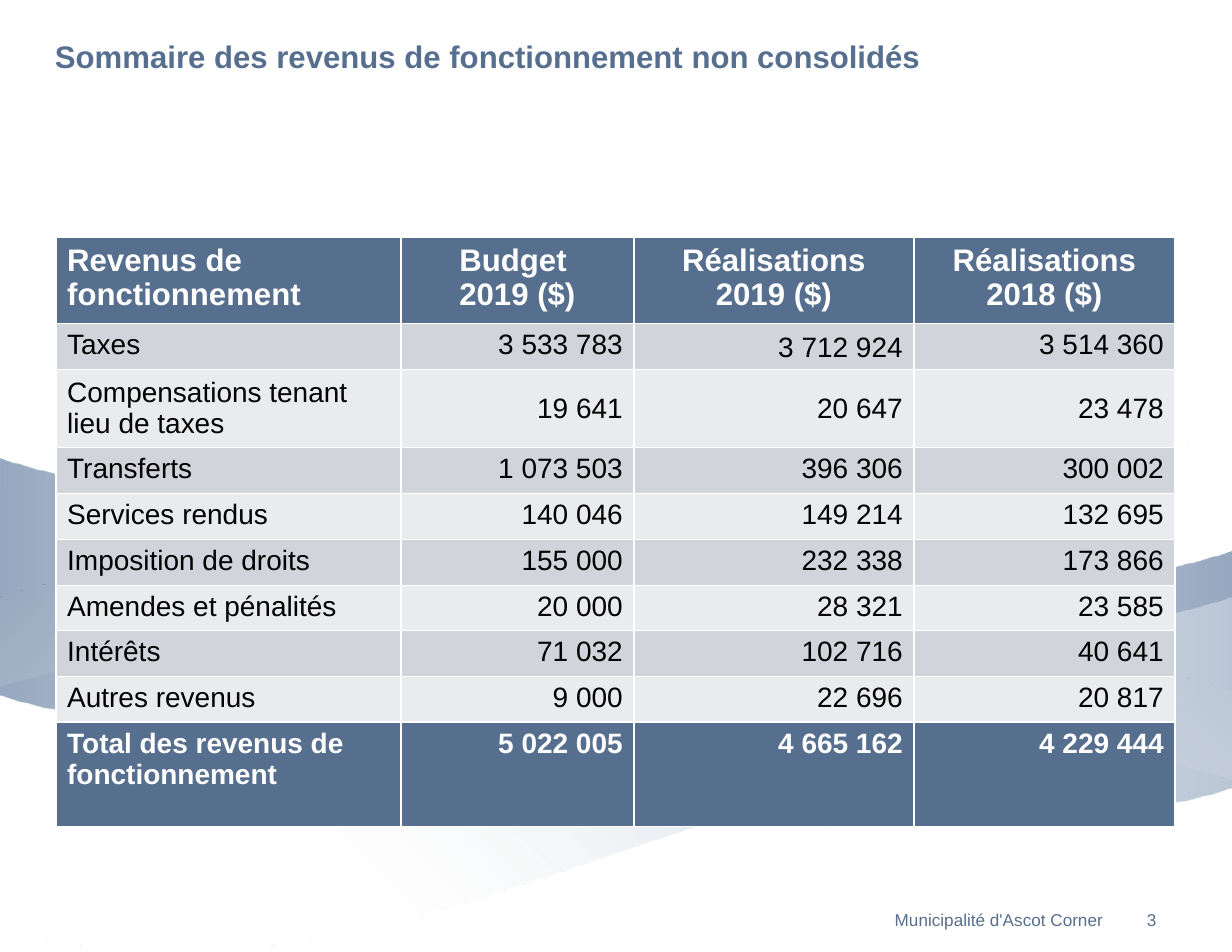
from lxml import etree
from pptx import Presentation
from pptx import util as u
from pptx.dml.color import RGBColor
from pptx.enum import text
from pptx.oxml import ns

W, H = 11, 8.5
FONT = "Arial"
NAVY, WHITE, BLACK = "576F8E", "FFFFFF", "000000"
MIST, BANDS = "96A8BF", ("D1D5DB", "EAEBEE")
LEFT, RIGHT, CENTER = text.PP_ALIGN.LEFT, text.PP_ALIGN.RIGHT, text.PP_ALIGN.CENTER
TOP, MIDDLE, BOTTOM = text.MSO_ANCHOR.TOP, text.MSO_ANCHOR.MIDDLE, text.MSO_ANCHOR.BOTTOM
RIBBONS = [(4.58, False, 180), (5.82, True, 315), (3.75, True, 180), (4.99, False, 315)]
RIBBON_OUTLINE = [
    ("moveTo", [(0.01, 0.34)]),
    ("cubicBezTo", [(3.67, -0.83), (7.34, 1.51), (11, 0.34)]),
    ("lnTo", [(11.01, 2.45)]),
    ("cubicBezTo", [(7.35, 3.62), (3.66, -0.03), (0, 1.14)]),
    ("cubicBezTo", [(-0.01, 0.44), (0.01, 1.04), (0.01, 0.34)]),
    ("close", []),
]
COLUMNS = [3.08, 2.08, 2.5, 2.33]
ROWS = [
    (0.41, ["Revenus de fonctionnement", "Budget \n2019 ($)", "Réalisations 2019 ($)", "Réalisations 2018 ($)"]),
    (0.41, ["Taxes", "3 533 783", "3 712 924", "3 514 360"]),
    (0.41, ["Compensations tenant lieu de taxes", "19 641", "20 647", "23 478"]),
    (0.41, ["Transferts", "1 073 503", "396 306", "300 002"]),
    (0.41, ["Services rendus", "140 046", "149 214", "132 695"]),
    (0.41, ["Imposition de droits", "155 000", "232 338", "173 866"]),
    (0.37, ["Amendes et pénalités", "20 000", "28 321", "23 585"]),
    (0.41, ["Intérêts", "71 032", "102 716", "40 641"]),
    (0.41, ["Autres revenus", "9 000", "22 696", "20 817"]),
    (0.93, ["Total des revenus de fonctionnement", "5 022 005", "4 665 162", "4 229 444"]),
]


def rgb(value):
    """Turn a hex string into a colour."""
    return RGBColor.from_string(value)


def style(p, size, color, bold=False, align=LEFT):
    """Format one paragraph."""
    p.alignment = align
    p.font.name, p.font.size, p.font.bold = FONT, u.Pt(size), bold
    p.font.color.rgb = rgb(color)


def set_outline(sp, outline):
    """Give a freeform an outline of lines and cubic curves."""
    path = sp._element.spPr.find(".//" + ns.qn("a:path"))
    for child in list(path):
        path.remove(child)
    for command, points in outline:
        step = etree.SubElement(path, ns.qn("a:" + command))
        for x, y in points:
            etree.SubElement(step, ns.qn("a:pt"), x=str(u.Inches(x)), y=str(u.Inches(y)))


def add_ribbon(s, top, mirrored, angle):
    """Draw one waving ribbon across the slide, fading to clear white."""
    left, right, bottom = -0.01, W, top + 2.68
    corners = [(left, top), (right, top), (right, bottom), (left, bottom)]
    corners = [(u.Inches(x), u.Inches(y)) for x, y in corners]
    builder = s.shapes.build_freeform(*corners[0])
    builder.add_line_segments(corners[1:])
    sp = builder.convert_to_shape()
    set_outline(sp, RIBBON_OUTLINE)
    if mirrored:
        sp._element.spPr.find(ns.qn("a:xfrm")).set("flipH", "1")
    sp.shadow.inherit = False
    sp.line.fill.background()
    sp.fill.gradient()
    sp.fill.gradient_angle = angle
    start, end = sp.fill.gradient_stops
    start.position, start.color.rgb = 0, rgb(MIST)
    end.position, end.color.rgb = 0.71, rgb(WHITE)
    clear = sp._element.spPr.findall(".//" + ns.qn("a:srgbClr"))[-1]
    etree.SubElement(clear, ns.qn("a:alpha"), val="35000")


def add_title(s, left, top, width, height):
    """Place and format the title placeholder."""
    sp = s.shapes.title
    sp.left, sp.top, sp.width, sp.height = map(u.Inches, (left, top, width, height))
    tf = sp.text_frame
    tf.text = "Sommaire des revenus de fonctionnement non consolidés"
    tf.margin_left = tf.margin_right = tf.margin_top = tf.margin_bottom = 0
    tf.vertical_anchor, tf.auto_size = TOP, text.MSO_AUTO_SIZE.NONE
    style(tf.paragraphs[0], 20, NAVY, True)


def add_footer(s, left, top, width, height, words, align):
    """Add one footer text."""
    tf = s.shapes.add_textbox(*map(u.Inches, (left, top, width, height))).text_frame
    tf.text = words
    tf.word_wrap, tf.vertical_anchor = False, MIDDLE
    tf.margin_left = tf.margin_right = u.Inches(0.11)
    tf.margin_top = tf.margin_bottom = u.Inches(0.06)
    p = tf.paragraphs[0]
    style(p, 11, NAVY, align=align)
    p.line_spacing = u.Pt(13.4)


def add_revenue_table(s, left, top):
    """Add the table of revenues with its header and total rows."""
    last = len(ROWS) - 1
    box = map(u.Inches, (left, top, sum(COLUMNS), sum(h for h, _ in ROWS)))
    table = s.shapes.add_table(len(ROWS), len(COLUMNS), *box).table
    table.last_row = True
    for column, width in zip(table.columns, COLUMNS):
        column.width = u.Inches(width)
    for r, (height, values) in enumerate(ROWS):
        table.rows[r].height = u.Inches(height)
        strong = r in (0, last)
        for c, value in enumerate(values):
            cell = table.cell(r, c)
            cell.text = value
            cell.fill.solid()
            cell.fill.fore_color.rgb = rgb(NAVY if strong else BANDS[(r - 1) % 2])
            cell.vertical_anchor = BOTTOM if (r, c) == (1, 2) else MIDDLE if r == 2 else TOP
            align = LEFT if c == 0 else CENTER if r == 0 else RIGHT
            for p in cell.text_frame.paragraphs:
                style(p, 20 if r == 0 else 18, WHITE if strong else BLACK, strong, align)


def main():
    """Build the slide and save it."""
    prs = Presentation()
    prs.slide_width, prs.slide_height = u.Inches(W), u.Inches(H)
    s = prs.slides.add_slide(prs.slide_layouts[5])
    for ribbon in RIBBONS:
        add_ribbon(s, *ribbon)
    add_footer(s, 10.13, 8.11, 0.37, 0.2, "3", LEFT)
    add_footer(s, 4.25, 8.11, 5.71, 0.2, "Municipalité d'Ascot Corner", RIGHT)
    add_title(s, 0.49, 0.33, 10, 0.89)
    add_revenue_table(s, 0.5, 2.12)
    prs.save("out.pptx")


if __name__ == "__main__":
    main()
